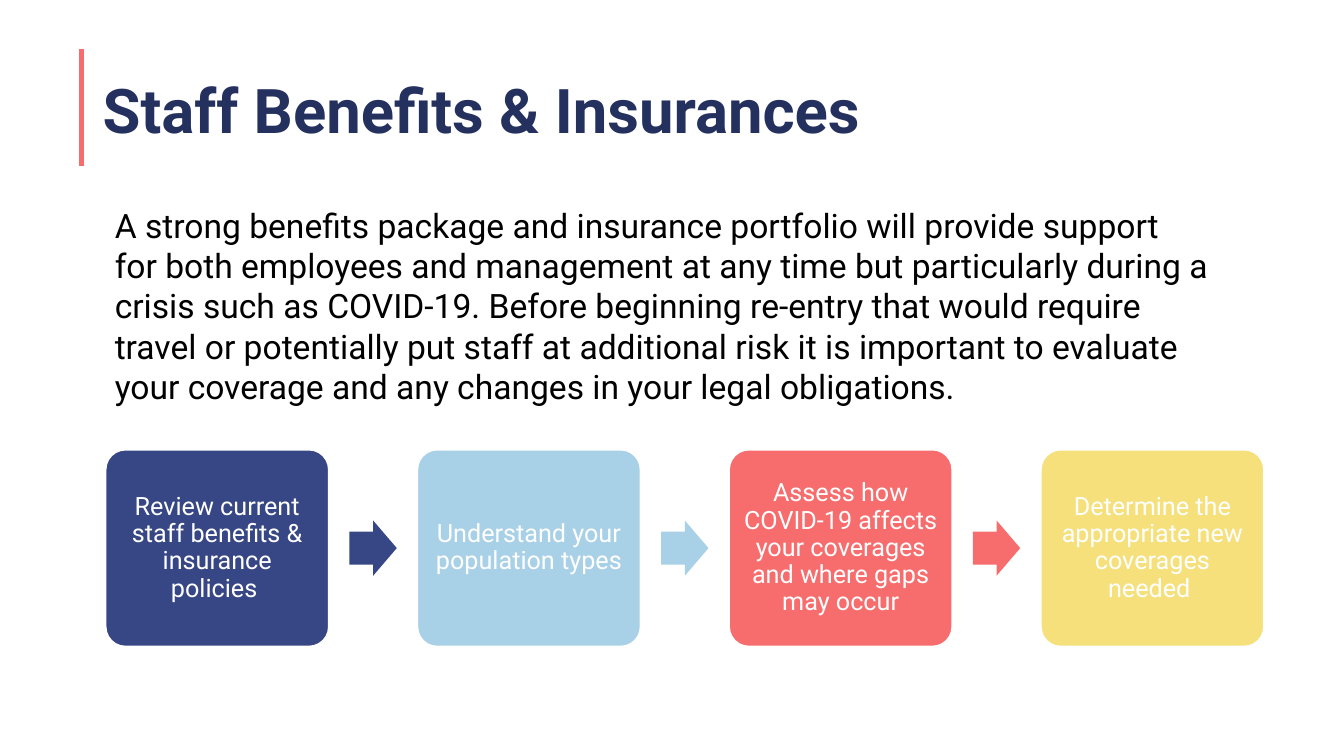
from pptx import Presentation
from pptx.dml.color import RGBColor
from pptx.enum.shapes import MSO_CONNECTOR, MSO_SHAPE
from pptx.enum.text import MSO_ANCHOR, PP_ALIGN
from pptx.oxml.ns import qn
from pptx.util import Pt
from lxml import etree

WHITE = RGBColor(0xFF, 0xFF, 0xFF)
BLACK = RGBColor(0x00, 0x00, 0x00)
NAVY = RGBColor(0x24, 0x30, 0x5E)
INDIGO = RGBColor(0x37, 0x47, 0x85)
SKY = RGBColor(0xA8, 0xD0, 0xE6)
CORAL = RGBColor(0xF7, 0x6C, 0x6C)
YELLOW = RGBColor(0xF5, 0xE0, 0x7B)
FONT = "Roboto"

TITLE = "Staff Benefits & Insurances"
INTRO = (
    "A strong benefits package and insurance portfolio will provide support "
    "for both employees and management at any time but particularly during a "
    "crisis such as COVID-19. Before beginning re-entry that would require "
    "travel or potentially put staff at additional risk it is important to "
    "evaluate your coverage and any changes in your legal obligations."
)
STEPS = [
    ("Review current staff benefits & insurance policies ", INDIGO),
    ("Understand your population types", SKY),
    ("Assess how COVID-19 affects your coverages and where gaps may occur", CORAL),
    ("Determine the appropriate new coverages needed ", YELLOW),
]


def write(sp, text, size, color, bold=False, anchor=MSO_ANCHOR.TOP):
    tf = sp.text_frame
    tf.word_wrap = True
    tf.vertical_anchor = anchor
    tf.text = text
    p = tf.paragraphs[0]
    font = p.runs[0].font
    font.name, font.size, font.bold = FONT, Pt(size), bold
    font.color.rgb = color
    return p


def add_filled(s, kind, x, y, w, h, color):
    sp = s.shapes.add_shape(kind, Pt(x), Pt(y), Pt(w), Pt(h))
    sp.shadow.inherit = False
    sp.fill.solid()
    sp.fill.fore_color.rgb = color
    sp.line.fill.background()
    return sp


def add_title(s, x, y, w, h):
    # Accent rule to the left of the heading
    rule = s.shapes.add_connector(
        MSO_CONNECTOR.STRAIGHT, Pt(x), Pt(y + 6), Pt(x), Pt(y + 90))
    rule.line.color.rgb = CORAL
    rule.line.width = Pt(3)
    etree.SubElement(rule.element.spPr, qn("a:effectLst"))
    # Heading
    sp = s.shapes.add_textbox(Pt(x + 8), Pt(y), Pt(w - 8), Pt(h))
    p = write(sp, TITLE, 44, NAVY, bold=True, anchor=MSO_ANCHOR.MIDDLE)
    p.line_spacing = 0.9


def add_intro(s, x, y, w, h):
    sp = s.shapes.add_textbox(Pt(x), Pt(y), Pt(w), Pt(h))
    write(sp, INTRO, 24, BLACK)


def add_card(s, x, y, w, h, text, color):
    sp = add_filled(s, MSO_SHAPE.ROUNDED_RECTANGLE, x, y, w, h, color)
    sp.adjustments[0] = 0.1
    sp.line.color.rgb = WHITE
    sp.line.width = Pt(1)
    tf = sp.text_frame
    # The rounded corners already inset the text by about 4 pt
    tf.margin_left = tf.margin_right = Pt(5)
    tf.margin_top = tf.margin_bottom = Pt(5)
    p = write(sp, text, 18, WHITE, anchor=MSO_ANCHOR.MIDDLE)
    p.alignment = PP_ALIGN.CENTER
    p.line_spacing = 0.9


def add_process(s, x, y, w, h):
    card_w, arrow_w, arrow_h = 159.2, 33.8, 39.5
    pitch = (w - card_w) / (len(STEPS) - 1)
    for i, (text, color) in enumerate(STEPS):
        left = x + i * pitch
        add_card(s, left, y, card_w, h, text, color)
        # Arrow to the next card
        if i < len(STEPS) - 1:
            arrow_x = left + (card_w + pitch - arrow_w) / 2
            arrow = add_filled(s, MSO_SHAPE.RIGHT_ARROW, arrow_x,
                               y + (h - arrow_h) / 2, arrow_w, arrow_h, color)
            arrow.adjustments[0] = 0.6
            arrow.adjustments[1] = 0.5


def main():
    prs = Presentation()
    prs.slide_width, prs.slide_height = Pt(960), Pt(540)
    s = prs.slides.add_slide(prs.slide_layouts[6])
    add_title(s, 58.3, 28.8, 836, 104.4)
    add_intro(s, 74.9, 142.6, 795.6, 152.6)
    add_process(s, 75.6, 321.3, 827.2, 140.4)
    prs.save("out.pptx")


if __name__ == "__main__":
    main()
